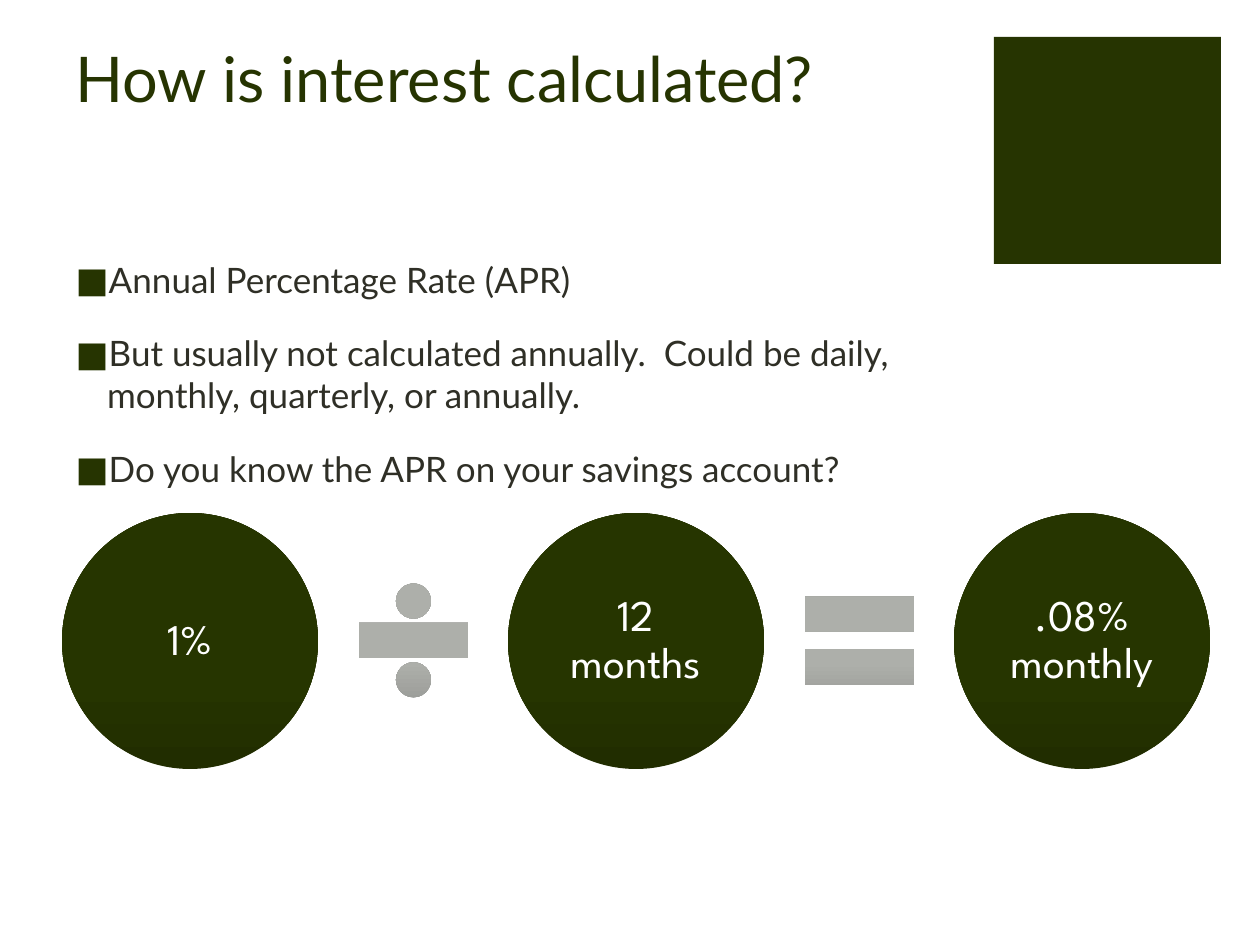
from dataclasses import dataclass

from lxml import etree
from pptx import Presentation
from pptx import util as u
from pptx.dml.color import RGBColor
from pptx.enum import shapes, text
from pptx.oxml.ns import qn

PX = u.Inches(1) / 126


@dataclass(frozen=True)
class Theme:
    green: str = "263401"
    ink: str = "2F2F26"
    white: str = "FFFFFF"
    circle: tuple = ("212D00", "263500")
    operator: tuple = ("949592", "ADAFAA")
    text_font: str = "Lato"
    circle_font: str = "League Spartan"
    title_size: int = 36
    body_size: int = 20
    circle_size: int = 25


theme = Theme()


def set_font(paragraph, name, size, color):
    paragraph.font.name = name
    paragraph.font.size = u.Pt(size)
    paragraph.font.color.rgb = RGBColor.from_string(color)


def add_shaded(slide, kind, left, top, size, colors):
    """Add a borderless square-framed shape, shaded up from its lower edge."""
    shape = slide.shapes.add_shape(kind, *(int(n * PX) for n in (left, top, size, size)))
    shape.shadow.inherit = False
    shape.line.fill.background()
    shape.fill.gradient()
    shape.fill.gradient_angle = 90
    for stop, color, position in zip(shape.fill.gradient_stops, colors, (0, 0.35)):
        stop.color.rgb = RGBColor.from_string(color)
        stop.position = position
    return shape


presentation = Presentation()
presentation.slide_width = u.Inches(10)
presentation.slide_height = u.Inches(7.5)
slide = presentation.slides.add_slide(presentation.slide_layouts[1])

# Corner square
square = slide.shapes.add_shape(
    shapes.MSO_SHAPE.RECTANGLE, *(int(n * PX) for n in (994, 37, 227, 227)))
square.shadow.inherit = False
square.fill.solid()
square.fill.fore_color.rgb = RGBColor.from_string(theme.green)
square.line.fill.background()

# Title and list
title, body = slide.placeholders
for placeholder, top, height, anchor in (
    (title, 47, 74, text.MSO_ANCHOR.BOTTOM),
    (body, 252, 267, text.MSO_ANCHOR.TOP),
):
    placeholder.left, placeholder.top = int(63 * PX), int(top * PX)
    placeholder.width, placeholder.height = int(897 * PX), int(height * PX)
    placeholder.text_frame.word_wrap = True
    placeholder.text_frame.auto_size = text.MSO_AUTO_SIZE.NONE
    placeholder.text_frame.vertical_anchor = anchor

title.text_frame.text = "How is interest calculated?"
heading = title.text_frame.paragraphs[0]
heading.alignment = text.PP_ALIGN.LEFT
set_font(heading, theme.text_font, theme.title_size, theme.green)

body.text_frame.text = "\n".join((
    "Annual Percentage Rate (APR)",
    "But usually not calculated annually.  Could be daily, monthly, quarterly, or annually.",
    "Do you know the APR on your savings account?",
))
for index, paragraph in enumerate(body.text_frame.paragraphs):
    paragraph.space_before = u.Pt(18 if index else 0)
    properties = paragraph._p.get_or_add_pPr()
    properties.set("marL", str(u.Inches(0.25)))
    properties.set("indent", str(-u.Inches(0.25)))
    bullet_color = etree.SubElement(properties, qn("a:buClr"))
    etree.SubElement(bullet_color, qn("a:srgbClr"), val=theme.green)
    etree.SubElement(properties, qn("a:buFont"), typeface=theme.text_font)
    etree.SubElement(properties, qn("a:buChar"), char="■")
    set_font(paragraph, theme.text_font, theme.body_size, theme.ink)

# Equation: circles at an equal pitch, operators centred in the gaps
CIRCLE, OPERATOR, PITCH = 256, 149, 446
LEFT, TOP = 62, 513
for index, label in enumerate(("1%", "12 months", ".08% monthly")):
    circle = add_shaded(slide, shapes.MSO_SHAPE.OVAL,
                        LEFT + index * PITCH, TOP, CIRCLE, theme.circle)
    frame = circle.text_frame
    frame.word_wrap = True
    frame.vertical_anchor = text.MSO_ANCHOR.MIDDLE
    frame.margin_left = frame.margin_right = int(4 * PX)
    frame.margin_top = frame.margin_bottom = int(4 * PX)
    frame.text = label
    paragraph = frame.paragraphs[0]
    paragraph.alignment = text.PP_ALIGN.CENTER
    paragraph.line_spacing = 0.9
    set_font(paragraph, theme.circle_font, theme.circle_size, theme.white)

for index, kind in enumerate((shapes.MSO_SHAPE.MATH_DIVIDE, shapes.MSO_SHAPE.MATH_EQUAL)):
    center = LEFT + CIRCLE // 2 + index * PITCH + PITCH // 2
    add_shaded(slide, kind, center - OPERATOR // 2,
               TOP + (CIRCLE - OPERATOR) // 2, OPERATOR, theme.operator)

presentation.save("out.pptx")
